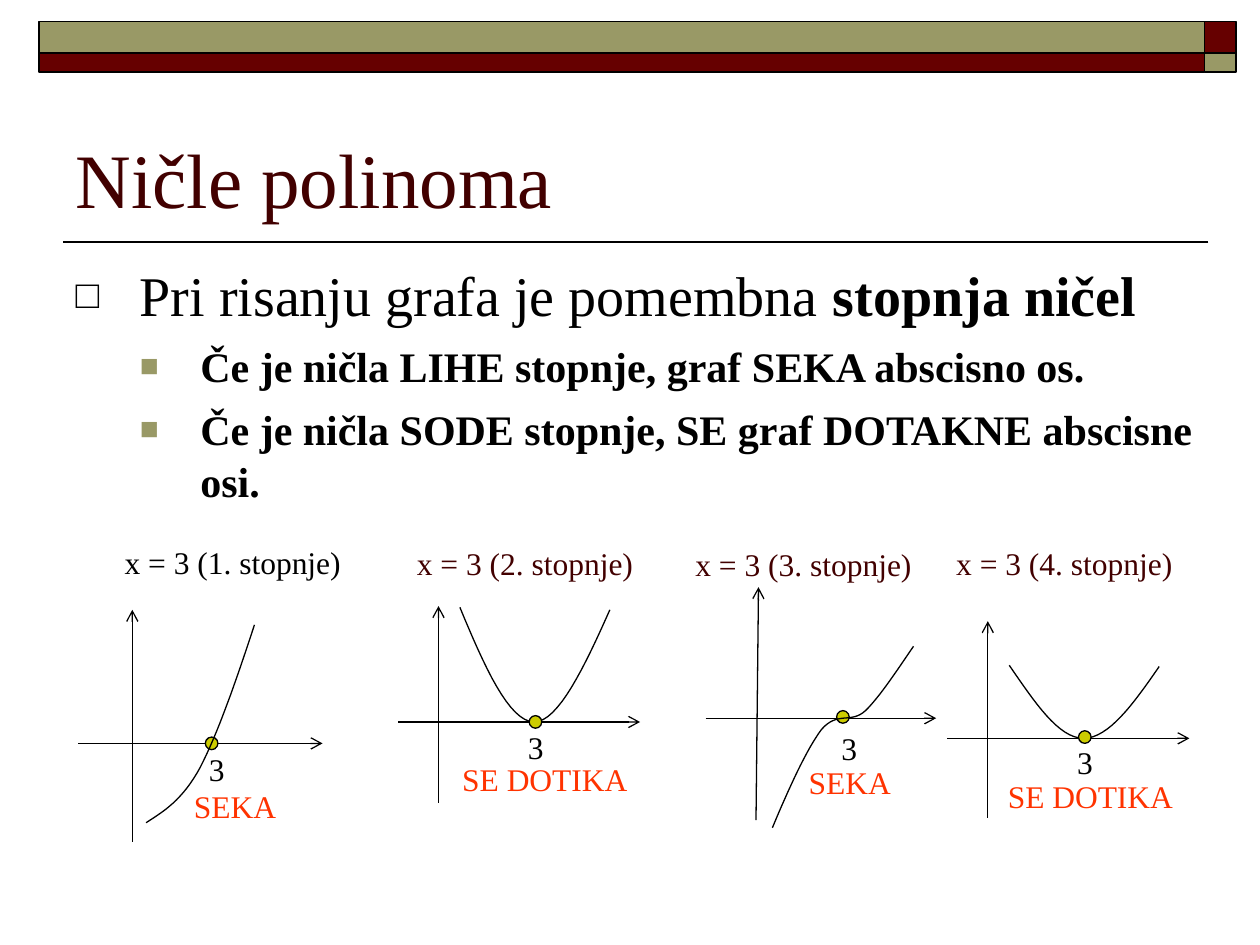
import dataclasses

import lxml.etree
import pptx
import pptx.dml.color
import pptx.enum.shapes
import pptx.enum.text
import pptx.oxml.ns
import pptx.util

Inches = pptx.util.Inches
Pt = pptx.util.Pt
qn = pptx.oxml.ns.qn
Shapes = pptx.enum.shapes.MSO_SHAPE
Anchor = pptx.enum.text.MSO_ANCHOR
Align = pptx.enum.text.PP_ALIGN


@dataclasses.dataclass(frozen=True)
class Theme:
    font: str = "Times New Roman"
    black: str = "000000"
    maroon: str = "660000"
    olive: str = "999966"
    heading: str = "420000"
    accent: str = "FF3300"
    dot: str = "CCCC00"
    title_size: int = 44
    body_size: int = 32
    detail_size: int = 24
    label_size: int = 18
    frame_width: float = 1
    graph_width: float = 0.75


@dataclasses.dataclass(frozen=True)
class Graph:
    caption: str
    caption_at: tuple
    caption_color: str
    horizontal: tuple
    vertical: tuple
    zero: tuple
    zero_label_at: tuple
    verdict: str
    verdict_at: tuple
    curve: tuple
    crosses: bool


def color(value):
    return pptx.dml.color.RGBColor.from_string(value)


def set_values(target, values):
    for name, value in values.items():
        setattr(target, name, value)


def bezier_points(curve, steps=16):
    points = [curve[0]]
    for first in range(0, len(curve) - 1, 3):
        a, b, c, d = curve[first:first + 4]
        for step in range(1, steps + 1):
            t = step / steps
            s = 1 - t
            points.append(tuple(
                s**3 * a[k] + 3 * s * s * t * b[k] + 3 * s * t * t * c[k] + t**3 * d[k]
                for k in (0, 1)))
    return [(Inches(x), Inches(y)) for x, y in points]


class SlideBuilder:
    def __init__(self, slide, theme):
        self.slide = slide
        self.shapes = slide.shapes
        self.theme = theme

    def outline(self, shape, width):
        shape.line.color.rgb = color(self.theme.black)
        shape.line.width = Pt(width)

    def line(self, start, end, width, arrow=False):
        connector = self.shapes.add_connector(
            pptx.enum.shapes.MSO_CONNECTOR.STRAIGHT, *map(Inches, (*start, *end)))
        self.outline(connector, width)
        lxml.etree.SubElement(connector._element.spPr, qn("a:effectLst"))
        if arrow:
            line = connector.line._get_or_add_ln()
            lxml.etree.SubElement(line, qn("a:tailEnd"), type="arrow")

    def filled(self, kind, box, fill, width):
        shape = self.shapes.add_shape(kind, *map(Inches, box))
        shape.shadow.inherit = False
        shape.fill.solid()
        shape.fill.fore_color.rgb = color(fill)
        self.outline(shape, width)

    def curve(self, control_points):
        points = bezier_points(control_points)
        builder = self.shapes.build_freeform(*points[0])
        builder.add_line_segments(points[1:], close=False)
        shape = builder.convert_to_shape()
        shape.shadow.inherit = False
        shape.fill.background()
        self.outline(shape, self.theme.graph_width)

    def run(self, paragraph, text, size, text_color, bold=False):
        run = paragraph.add_run()
        run.text = text
        set_values(run.font, {"name": self.theme.font, "size": Pt(size), "bold": bold})
        run.font.color.rgb = color(text_color)

    def label(self, text, position, width, text_color):
        box = self.shapes.add_textbox(*map(Inches, (*position, width, 0.4)))
        set_values(box.text_frame, {"word_wrap": True, "margin_right": 0})
        self.run(box.text_frame.paragraphs[0], text, self.theme.label_size, text_color)

    def placeholder(self, index, box, anchor):
        shape = self.slide.placeholders[index]
        set_values(shape, dict(zip(("left", "top", "width", "height"), map(Inches, box))))
        set_values(shape.text_frame, {
            "word_wrap": True, "vertical_anchor": anchor,
            "auto_size": pptx.enum.text.MSO_AUTO_SIZE.NONE})
        return shape.text_frame

    def title(self, text, box):
        paragraph = self.placeholder(0, box, Anchor.BOTTOM).paragraphs[0]
        paragraph.alignment = Align.LEFT
        self.run(paragraph, text, self.theme.title_size, self.theme.heading)

    def bullet(self, paragraph, character, bullet_color, percent, margin, hanging):
        properties = paragraph._p.get_or_add_pPr()
        properties.set("marL", str(Inches(margin)))
        properties.set("indent", str(-Inches(hanging)))
        holder = lxml.etree.SubElement(properties, qn("a:buClr"))
        lxml.etree.SubElement(holder, qn("a:srgbClr"), val=bullet_color)
        lxml.etree.SubElement(properties, qn("a:buSzPct"), val=str(percent * 1000))
        lxml.etree.SubElement(properties, qn("a:buChar"), char=character)

    def bullets(self, items, box):
        frame = self.placeholder(1, box, Anchor.TOP)
        theme = self.theme
        for number, (level, runs) in enumerate(items):
            paragraph = frame.add_paragraph() if number else frame.paragraphs[0]
            if level:
                self.bullet(paragraph, "■", theme.olive, 75, 0.99, 0.48)
            else:
                self.bullet(paragraph, "□", theme.black, 70, 0.51, 0.51)
            set_values(paragraph, {
                "level": level, "line_spacing": 1.04, "alignment": Align.LEFT,
                "space_before": Pt(6 if number else 0)})
            size = theme.detail_size if level else theme.body_size
            for text, bold in runs:
                self.run(paragraph, text, size, theme.black, bold)

    def zero_dot(self, center):
        x, y = center
        self.filled(Shapes.OVAL, (x - 0.05, y - 0.05, 0.1, 0.1),
                    self.theme.dot, self.theme.graph_width)

    def graph(self, graph):
        for axis in (graph.horizontal, graph.vertical):
            self.line(*axis, self.theme.graph_width, arrow=True)
        layers = [(self.zero_dot, graph.zero), (self.curve, graph.curve)]
        for draw, points in layers if graph.crosses else reversed(layers):
            draw(points)
        self.label(graph.caption, graph.caption_at, 1.98, graph.caption_color)
        self.label("3", graph.zero_label_at, 0.49, self.theme.black)
        self.label(graph.verdict, graph.verdict_at, 0.98 if graph.crosses else 1.64,
                   self.theme.accent)


def main():
    presentation = pptx.Presentation()
    presentation.slide_width, presentation.slide_height = Inches(10), Inches(7.5)
    slide = presentation.slides.add_slide(presentation.slide_layouts[1])
    theme = Theme()
    builder = SlideBuilder(slide, theme)

    builder.line((9.59, 1.92), (0.5, 1.92), theme.frame_width)
    for left, width, fills in ((0.31, 9.25, (theme.olive, theme.maroon)),
                               (9.56, 0.25, (theme.maroon, theme.olive))):
        for top, height, fill in zip((0.17, 0.42), (0.25, 0.15), fills):
            builder.filled(Shapes.RECTANGLE, (left, top, width, height),
                           fill, theme.frame_width)

    builder.title("Ničle polinoma", (0.5, 0.58, 9, 1.25))
    builder.bullets([
        (0, [("Pri risanju grafa je pomembna ", False), ("stopnja ničel", True)]),
        (1, [("Če je ničla LIHE stopnje, graf SEKA abscisno os.", True)]),
        (1, [("Če je ničla SODE stopnje, SE graf DOTAKNE abscisne osi.", True)]),
    ], (0.5, 2, 9.16, 4.71))

    graphs = [
        Graph("x = 3 (1. stopnje)", (0.89, 4.26), theme.black,
              ((0.62, 5.9), (2.56, 5.9)), ((1.05, 6.68), (1.05, 4.84)),
              (1.68, 5.9), (1.56, 5.9), "SEKA", (1.44, 6.2),
              ((1.16, 6.53), (1.3, 6.44), (1.45, 6.35), (1.59, 6.09),
               (1.73, 5.82), (1.88, 5.39), (2.02, 4.96)), True),
        Graph("x = 3 (2. stopnje)", (3.21, 4.27), theme.heading,
              ((3.16, 5.73), (5.08, 5.73)), ((3.48, 6.37), (3.48, 4.81)),
              (4.25, 5.73), (4.09, 5.73), "SE DOTIKA", (3.57, 5.98),
              ((3.65, 4.82), (3.84, 5.28), (4.04, 5.73), (4.24, 5.73),
               (4.43, 5.73), (4.64, 5.29), (4.84, 4.84)), False),
        Graph("x = 3 (3. stopnje)", (5.42, 4.28), theme.heading,
              ((5.6, 5.7), (7.43, 5.7)), ((6, 6.51), (6.02, 4.66)),
              (6.69, 5.69), (6.58, 5.74), "SEKA", (6.32, 6.01),
              ((6.13, 6.57), (6.26, 6.26), (6.4, 5.95), (6.52, 5.79), (6.65, 5.64),
               (6.75, 5.75), (6.87, 5.64), (6.99, 5.52), (7.12, 5.32), (7.25, 5.13)), True),
        Graph("x = 3 (4. stopnje)", (7.49, 4.27), theme.heading,
              ((7.52, 5.86), (9.44, 5.86)), ((7.84, 6.49), (7.84, 4.93)),
              (8.61, 5.85), (8.45, 5.85), "SE DOTIKA", (7.9, 6.12),
              ((8.01, 5.28), (8.21, 5.57), (8.4, 5.86), (8.6, 5.86),
               (8.8, 5.86), (9, 5.58), (9.2, 5.29)), False),
    ]
    for graph in graphs:
        builder.graph(graph)

    presentation.save("out.pptx")


if __name__ == "__main__":
    main()
